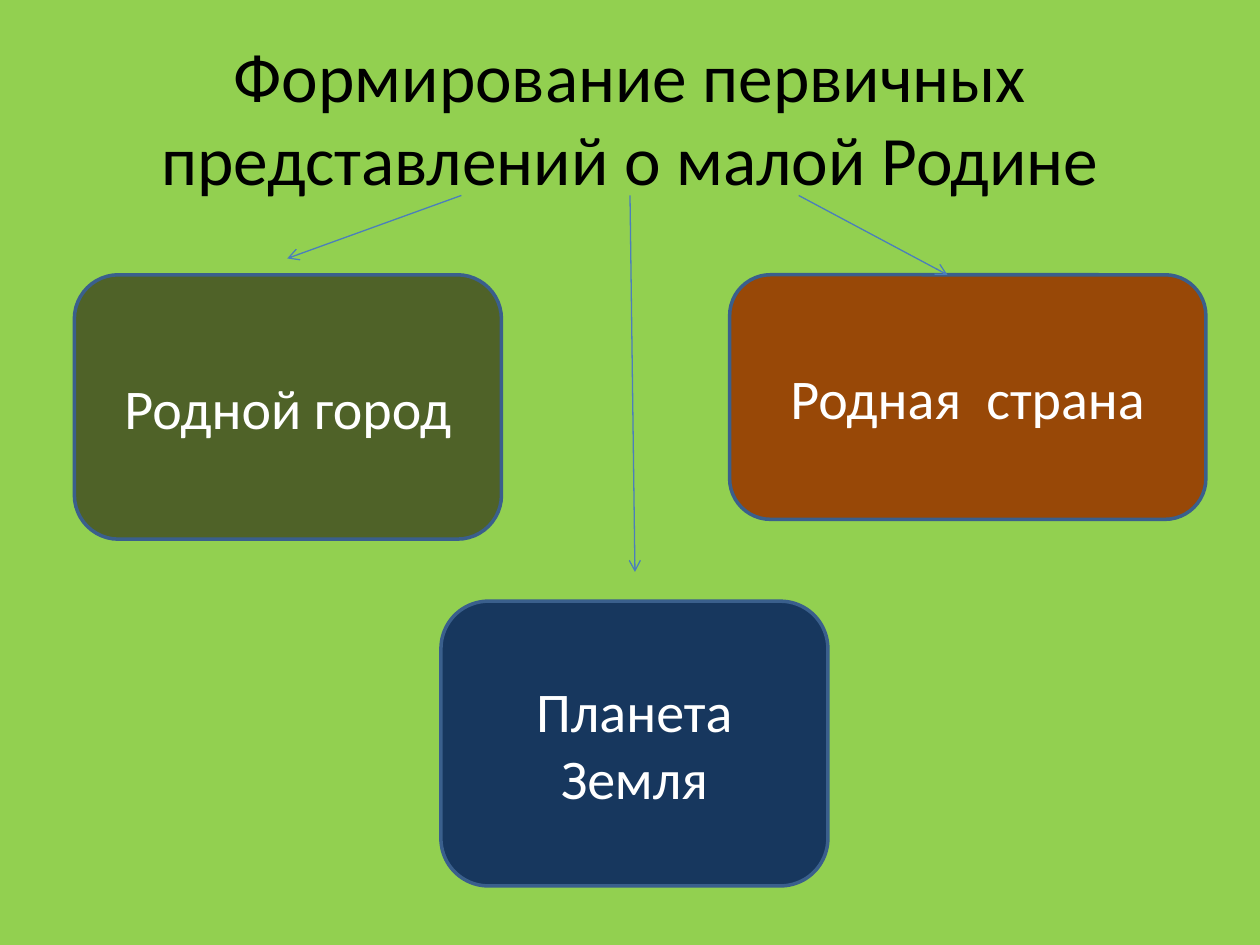
from pptx import Presentation
from pptx.dml.color import RGBColor
from pptx.enum.shapes import MSO_CONNECTOR, MSO_SHAPE
from pptx.enum.text import MSO_ANCHOR, MSO_AUTO_SIZE, PP_ALIGN
from pptx.oxml.ns import qn
from pptx.util import Cm, Pt
from lxml import etree

BACKGROUND = RGBColor(0x92, 0xD0, 0x50)
BLACK = RGBColor(0x00, 0x00, 0x00)
WHITE = RGBColor(0xFF, 0xFF, 0xFF)
OLIVE = RGBColor(0x4F, 0x62, 0x28)
BROWN = RGBColor(0x98, 0x48, 0x07)
NAVY = RGBColor(0x17, 0x37, 0x5E)
OUTLINE = RGBColor(0x3A, 0x5F, 0x8C)
ARROW = RGBColor(0x4B, 0x7E, 0xBC)

ROW_TOP = 5.54
ARROW_TOP = 3.94

# Text, fill, and left, top, width, height in centimetres
TOPICS = [
    ("Родной город", OLIVE, (1.5, ROW_TOP, 8.61, 5.33)),
    ("Родная  страна", BROWN, (14.71, ROW_TOP, 9.6, 4.93)),
    ("Планета Земля", NAVY, (8.89, 12.12, 7.8, 5.74)),
]

# Start x, end x and end y in centimetres
ARROWS = [(9.3, 5.79, 5.21), (16.1, 19.1, ROW_TOP), (12.7, 12.8, 11.53)]


def write_text(shape, text, size, color):
    """Fill the shape with one centred paragraph."""
    frame = shape.text_frame
    frame.text = text
    frame.word_wrap = True
    frame.auto_size = MSO_AUTO_SIZE.NONE
    frame.vertical_anchor = MSO_ANCHOR.MIDDLE
    paragraph = frame.paragraphs[0]
    paragraph.alignment = PP_ALIGN.CENTER
    paragraph.font.name = "Calibri"
    paragraph.font.size = Pt(size)
    paragraph.font.color.rgb = color


def set_title(slide, text):
    title = slide.shapes.title
    title.left, title.top = Cm(1.27), Cm(0.76)
    title.width, title.height = Cm(22.86), Cm(3.18)
    write_text(title, text, 39.6, BLACK)


def add_topic(slide, text, fill, box):
    shape = slide.shapes.add_shape(
        MSO_SHAPE.ROUNDED_RECTANGLE, *(Cm(length) for length in box))
    shape.shadow.inherit = False
    shape.fill.solid()
    shape.fill.fore_color.rgb = fill
    shape.line.color.rgb = OUTLINE
    shape.line.width = Pt(2)
    write_text(shape, text, 32, WHITE)


def add_arrow(slide, start_x, end_x, end_y):
    connector = slide.shapes.add_connector(
        MSO_CONNECTOR.STRAIGHT, Cm(start_x), Cm(ARROW_TOP), Cm(end_x), Cm(end_y))
    connector.line.color.rgb = ARROW
    connector.line.width = Pt(0.75)
    properties = connector.element.spPr
    etree.SubElement(properties.find(qn("a:ln")), qn("a:tailEnd"), type="arrow")
    etree.SubElement(properties, qn("a:effectLst"))


def main():
    presentation = Presentation()
    presentation.slide_width, presentation.slide_height = Cm(25.4), Cm(19.05)
    slide = presentation.slides.add_slide(presentation.slide_layouts[5])
    slide.background.fill.solid()
    slide.background.fill.fore_color.rgb = BACKGROUND
    set_title(slide, "Формирование первичных представлений о малой Родине")
    for text, fill, box in TOPICS:
        add_topic(slide, text, fill, box)
    for start_x, end_x, end_y in ARROWS:
        add_arrow(slide, start_x, end_x, end_y)
    presentation.save("out.pptx")


if __name__ == "__main__":
    main()
